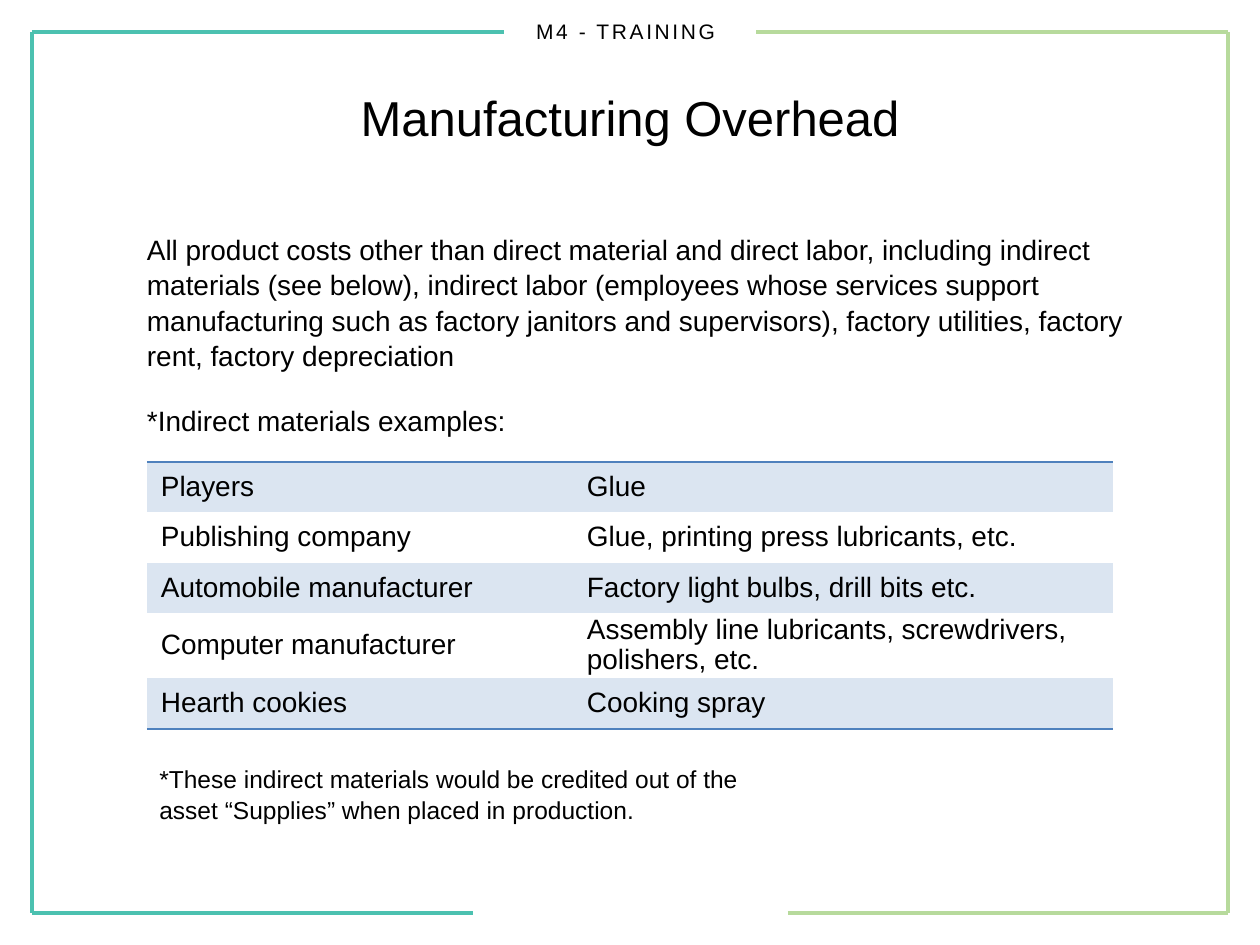
from lxml import etree
from pptx import Presentation
from pptx.dml.color import RGBColor
from pptx.enum.shapes import MSO_CONNECTOR as CONN
from pptx.enum.text import MSO_ANCHOR as ANCHOR, MSO_AUTO_SIZE as AUTO, PP_ALIGN as ALIGN
from pptx.oxml import parse_xml
from pptx.oxml.ns import qn
from pptx.util import Pt

SCALE = 914400 / 126
TEAL, GREEN, BLUE, BAND, BLACK = "4CC1B0", "B7DA9C", "4F81BD", "DBE5F1", "000000"


def px(*values):
    return [round(v * SCALE) for v in values]


def add_run(p, text, size):
    r = p.add_run()
    r.text = text
    r.font.name = "Arial"
    r.font.size = Pt(size)
    r.font.color.rgb = RGBColor.from_string(BLACK)
    return r


prs = Presentation()
prs.slide_width, prs.slide_height = px(1260, 945)
s = prs.slides.add_slide(prs.slide_layouts[1])

left, right, top, bottom = 32, 1228, 32, 913
for x1, y1, x2, y2, color in [
    (left, top, left, bottom, TEAL),
    (right, top, right, bottom, GREEN),
    (left, bottom, 473, bottom, TEAL),
    (788, bottom, right, bottom, GREEN),
    (left, top, 504, top, TEAL),
    (756, top, right, top, GREEN),
]:
    line = s.shapes.add_connector(CONN.STRAIGHT, *px(x1, y1, x2, y2))
    line.line.color.rgb = RGBColor.from_string(color)
    line.line.width = Pt(2.25)
    etree.SubElement(line._element.spPr, qn("a:effectLst"))

header = s.shapes.add_textbox(*px(0, 0, 1260, 63))
tf = header.text_frame
tf.word_wrap = True
tf.vertical_anchor = ANCHOR.MIDDLE
p = tf.paragraphs[0]
p.alignment = ALIGN.CENTER
r = add_run(p, "M4 - TRAINING ", 12)
r.font._element.set("spc", "150")

title = s.shapes.title
title.left, title.top, title.width, title.height = px(63, 38, 1134, 157)
tf = title.text_frame
tf.vertical_anchor = ANCHOR.MIDDLE
p = tf.paragraphs[0]
p.alignment = ALIGN.CENTER
add_run(p, "Manufacturing Overhead", 28)

body = s.placeholders[1]
body.left, body.top, body.width, body.height = px(147, 231, 987, 199)
tf = body.text_frame
tf.auto_size = AUTO.NONE
tf.vertical_anchor = ANCHOR.TOP
tf.margin_left = tf.margin_right = tf.margin_top = tf.margin_bottom = 0
for i, text in enumerate([
    "All product costs other than direct material and direct labor, including indirect "
    "materials (see below), indirect labor (employees whose services support manufacturing "
    "such as factory janitors and supervisors), factory utilities, factory rent, "
    "factory depreciation",
    "*Indirect materials examples:",
]):
    p = tf.add_paragraph() if i else tf.paragraphs[0]
    pPr = p._p.get_or_add_pPr()
    pPr.set("marL", "0")
    pPr.set("indent", "0")
    etree.SubElement(pPr, qn("a:buNone"))
    p.line_spacing = 1.05
    p.space_before = Pt(17 if i else 0)
    add_run(p, text, 16)

rows = [
    ("Players", "Glue"),
    ("Publishing company", "Glue, printing press lubricants, etc."),
    ("Automobile manufacturer", "Factory light bulbs, drill bits etc."),
    ("Computer manufacturer", "Assembly line lubricants, screwdrivers, polishers, etc."),
    ("Hearth cookies", "Cooking spray"),
]
frame = s.shapes.add_table(len(rows), 2, *px(147, 462, 966, 252))
table = frame.table
table.first_row = table.horz_banding = False
style = table._tbl.tblPr.find(qn("a:tableStyleId"))
style.text = "{2D5ABB26-0587-4C30-8999-92F81FD0307C}"
table.columns[0].width, table.columns[1].width = px(426, 540)
edges = {0: "lnT", len(rows) - 1: "lnB"}
for i, row in enumerate(rows):
    table.rows[i].height = px(62 if i == 3 else 50.4)[0]
    for j, text in enumerate(row):
        cell = table.cell(i, j)
        cell.vertical_anchor = ANCHOR.MIDDLE
        cell.margin_left = cell.margin_right = px(14)[0]
        cell.margin_top = cell.margin_bottom = 0
        p = cell.text_frame.paragraphs[0]
        p.line_spacing = 0.97
        add_run(p, text, 16)
        if i % 2:
            cell.fill.background()
        else:
            cell.fill.solid()
            cell.fill.fore_color.rgb = RGBColor.from_string(BAND)
        if i in edges:
            cell._tc.get_or_add_tcPr().insert(0, parse_xml(
                f'<a:{edges[i]} xmlns:a="http://schemas.openxmlformats.org/drawingml/2006/main" '
                f'w="12700"><a:solidFill><a:srgbClr val="{BLUE}"/></a:solidFill></a:{edges[i]}>'))

note = s.shapes.add_textbox(*px(147, 756, 630, 72))
tf = note.text_frame
tf.word_wrap = True
p = tf.paragraphs[0]
p.line_spacing = 1.05
add_run(p, "*These indirect materials would be credited out of the asset “Supplies” "
        "when placed in production.", 14)

prs.save("out.pptx")
